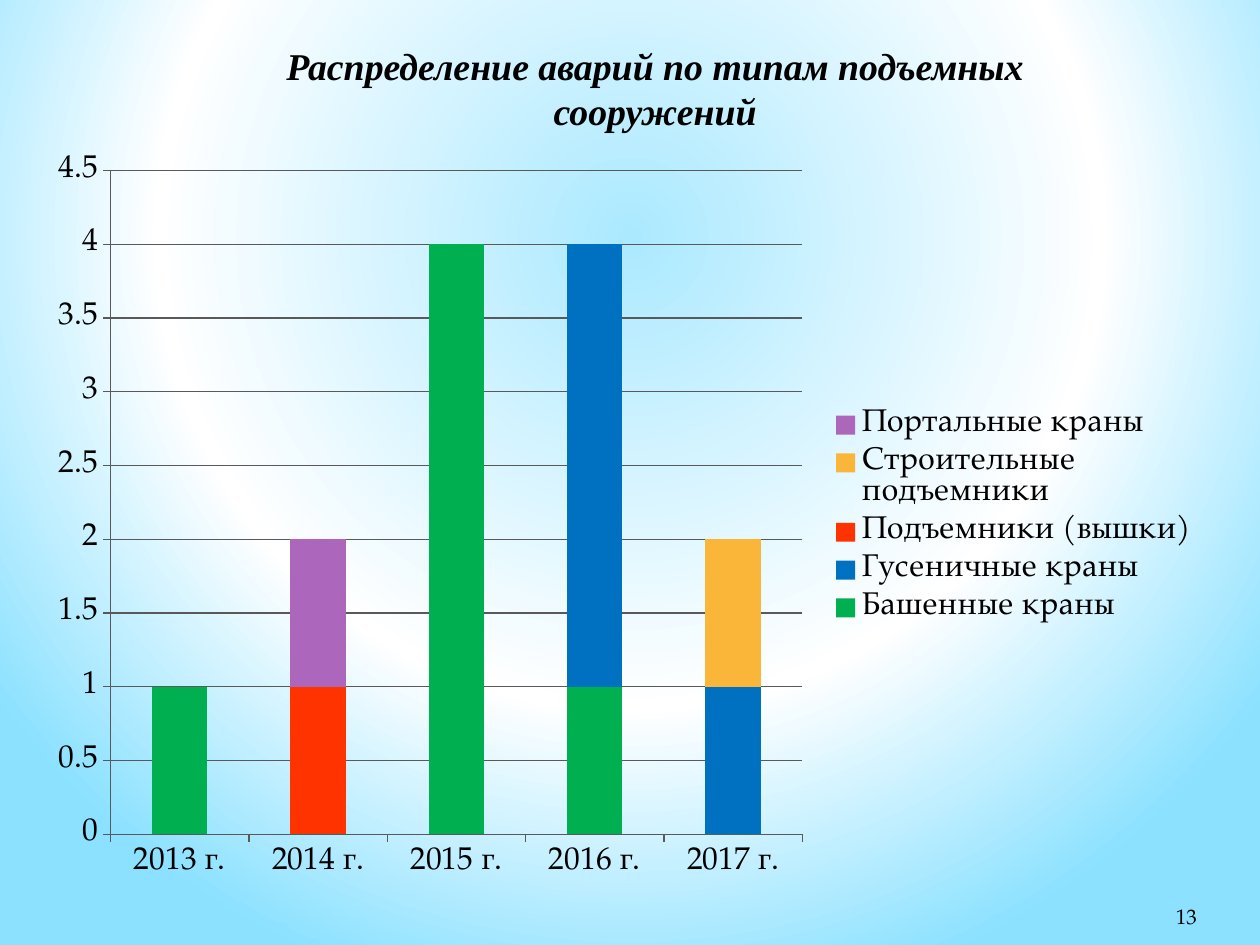
from lxml import etree
from pptx import Presentation
from pptx.chart.data import CategoryChartData
from pptx.dml.color import RGBColor
from pptx.enum.chart import XL_CHART_TYPE, XL_LEGEND_POSITION, XL_TICK_MARK
from pptx.enum.text import MSO_ANCHOR, MSO_AUTO_SIZE, PP_ALIGN
from pptx.oxml.ns import qn
from pptx.util import Inches, Pt

STACKED = XL_CHART_TYPE.COLUMN_STACKED
LEGEND_RIGHT = XL_LEGEND_POSITION.RIGHT
TICK_OUT, TICK_NONE = XL_TICK_MARK.OUTSIDE, XL_TICK_MARK.NONE
TOP, BOTTOM = MSO_ANCHOR.TOP, MSO_ANCHOR.BOTTOM
GROW, FIXED = MSO_AUTO_SIZE.SHAPE_TO_FIT_TEXT, MSO_AUTO_SIZE.NONE
CENTER, RIGHT = PP_ALIGN.CENTER, PP_ALIGN.RIGHT

BLACK = RGBColor(0x00, 0x00, 0x00)
GRAY = RGBColor(0x59, 0x59, 0x59)
GREEN = RGBColor(0x00, 0xB0, 0x50)
BLUE = RGBColor(0x00, 0x70, 0xC0)
RED = RGBColor(0xFF, 0x33, 0x00)
AMBER = RGBColor(0xF9, 0xB6, 0x39)
PURPLE = RGBColor(0xAC, 0x66, 0xBB)
SKY = RGBColor(0xAB, 0xE9, 0xFF)
WHITE = RGBColor(0xFF, 0xFF, 0xFF)
AQUA = RGBColor(0x8B, 0xE1, 0xFF)

YEARS = ["2013 г.", "2014 г.", "2015 г.", "2016 г.", "2017 г."]
CRANES = [
    ("Башенные краны", (1, 0, 4, 1, 0), GREEN),
    ("Гусеничные краны", (0, 0, 0, 3, 1), BLUE),
    ("Подъемники (вышки)", (0, 1, 0, 0, 0), RED),
    ("Строительные подъемники", (0, 0, 0, 0, 1), AMBER),
    ("Портальные краны", (0, 1, 0, 0, 0), PURPLE),
]


class SlideBuilder:
    """Holds the fonts and the current slide, and adds its elements."""

    body_font = "TeX Gyre Pagella"
    title_font = "Times New Roman"

    def __init__(self, slide):
        self.slide = slide

    def radial_background(self, stops, focus):
        self.slide.background.fill.gradient()
        gradient = self.slide.element.find(".//" + qn("a:gradFill"))
        for child in list(gradient):
            gradient.remove(child)
        stop_list = etree.SubElement(gradient, qn("a:gsLst"))
        for percent, color in stops:
            stop = etree.SubElement(stop_list, qn("a:gs"), pos=str(percent * 1000))
            etree.SubElement(stop, qn("a:srgbClr"), val=str(color))
        circle = etree.SubElement(gradient, qn("a:path"), path="circle")
        edges = {side: str(percent * 1000) for side, percent in zip("ltrb", focus)}
        etree.SubElement(circle, qn("a:fillToRect"), **edges)

    def text(self, wording, box, size, font, align, anchor=TOP, fit=FIXED, side_inset=0.1, strong=False):
        frame = self.slide.shapes.add_textbox(*map(Inches, box)).text_frame
        frame.word_wrap = True
        frame.auto_size = fit
        frame.vertical_anchor = anchor
        frame.margin_left = frame.margin_right = Inches(side_inset)
        paragraph = frame.paragraphs[0]
        paragraph.text = wording
        paragraph.alignment = align
        paragraph.font.name = font
        paragraph.font.size = Pt(size)
        paragraph.font.color.rgb = BLACK
        paragraph.font.bold = paragraph.font.italic = strong

    def stacked_columns(self, categories, series, box, size):
        data = CategoryChartData(number_format="General")
        data.categories = categories
        for name, values, _ in series:
            data.add_series(name, values)
        chart = self.slide.shapes.add_chart(STACKED, *map(Inches, box), data).chart
        chart.has_title = False
        chart.font.name = self.body_font
        chart.font.size = Pt(size)
        chart.font.color.rgb = BLACK
        chart.has_legend = True
        chart.legend.position = LEGEND_RIGHT
        chart.legend.include_in_layout = False
        plot = chart.plots[0]
        plot.gap_width = 150
        plot.overlap = 100
        plot.vary_by_categories = False
        for column, (_, _, color) in zip(plot.series, series):
            column.format.fill.solid()
            column.format.fill.fore_color.rgb = color
        chart.value_axis.has_major_gridlines = True
        chart.value_axis.major_gridlines.format.line.color.rgb = GRAY
        for axis in (chart.category_axis, chart.value_axis):
            axis.major_tick_mark = TICK_OUT
            axis.minor_tick_mark = TICK_NONE
            axis.format.line.color.rgb = GRAY


def main():
    deck = Presentation()
    deck.slide_width, deck.slide_height = Inches(10), Inches(7.5)
    builder = SlideBuilder(deck.slides.add_slide(deck.slide_layouts[6]))
    builder.radial_background([(0, SKY), (60, WHITE), (100, AQUA)], (20, 10, 20, 60))
    builder.stacked_columns(YEARS, CRANES, (0.28, 1.11, 9.34, 5.98), 18)
    builder.text("Распределение аварий по типам подъемных сооружений", (1.38, 0.29, 7.64, 0.83),
                 21.6, builder.title_font, CENTER, fit=GROW, strong=True)
    builder.text("13", (8.67, 7.02, 0.83, 0.4), 12, builder.body_font, RIGHT, anchor=BOTTOM, side_inset=0)
    deck.save("out.pptx")


if __name__ == "__main__":
    main()
